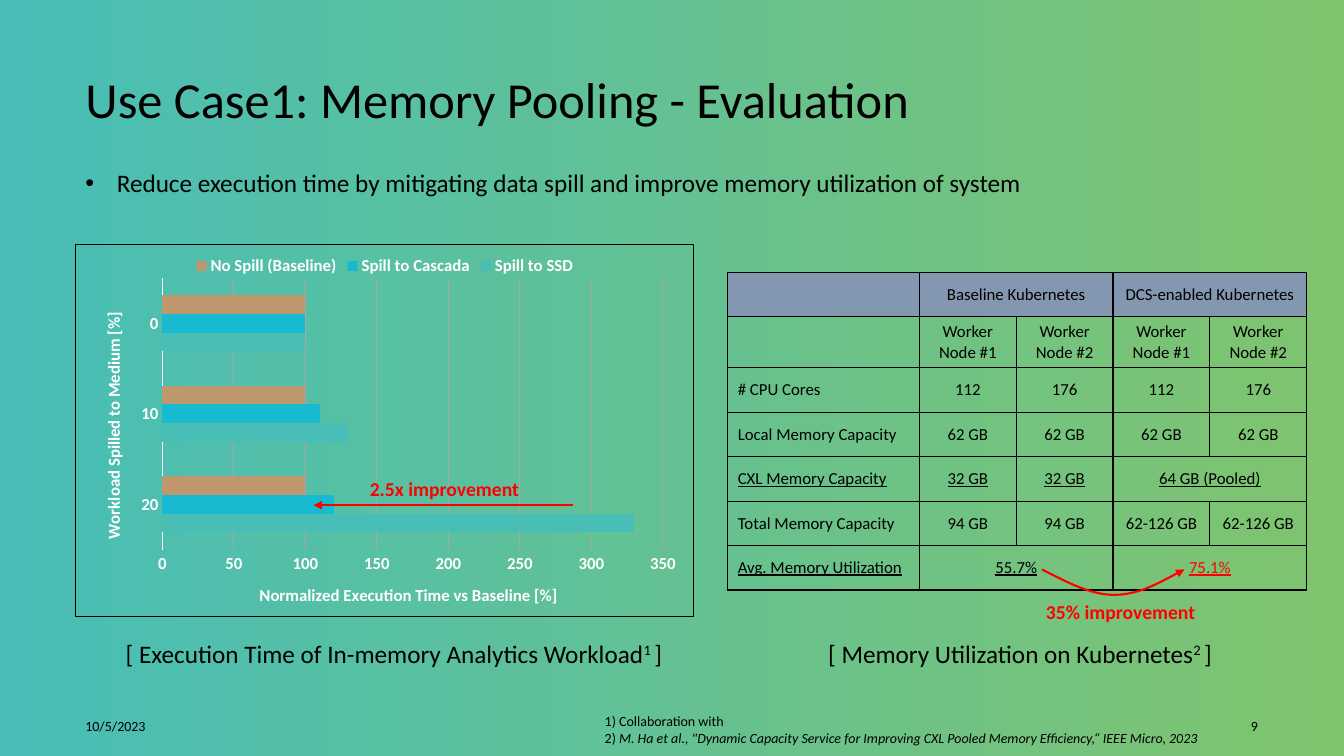
from pptx import Presentation
from pptx.chart.data import CategoryChartData
from pptx.dml.color import RGBColor
from pptx.enum.chart import XL_CHART_TYPE, XL_LEGEND_POSITION, XL_TICK_MARK
from pptx.enum.shapes import MSO_CONNECTOR
from pptx.enum.text import MSO_ANCHOR, MSO_AUTO_SIZE, PP_ALIGN
from pptx.oxml import parse_xml
from pptx.oxml.ns import nsdecls, qn
from pptx.util import Cm, Pt

LEFT, CENTER, RIGHT = PP_ALIGN.LEFT, PP_ALIGN.CENTER, PP_ALIGN.RIGHT
TOP, MIDDLE = MSO_ANCHOR.TOP, MSO_ANCHOR.MIDDLE
NO_TICKS = XL_TICK_MARK.NONE
FONT, BLACK, WHITE, RED, HEADER = "Calibri", "000000", "FFFFFF", "FF0000", "8497B0"
BACKGROUND = ("48BEB7", "80C46E")

TITLE = "Use Case1: Memory Pooling - Evaluation"
BULLET = "Reduce execution time by mitigating data spill and improve memory utilization of system"
CATEGORIES = ["20", "10", "0"]
SERIES = [
    ("Spill to SSD", (330, 130, 100), "48BEB7"),
    ("Spill to Cascada", (120, 110, 100), "17BAD0"),
    ("No Spill (Baseline)", (100, 100, 100), "BE986C"),
]
CATEGORY_TITLE = "Workload Spilled to Medium [%]"
VALUE_TITLE = "Normalized Execution Time vs Baseline [%]"
PLOT_LAYOUT = {"x": 0.14, "y": 0.09, "w": 0.81, "h": 0.73}

# None joins a cell to the one on its left
TABLE = [
    ["", "Baseline Kubernetes", None, "DCS-enabled Kubernetes", None],
    ["", "Worker\nNode #1", "Worker\nNode #2", "Worker\nNode #1", "Worker\nNode #2"],
    ["# CPU Cores", "112", "176", "112", "176"],
    ["Local Memory Capacity", "62 GB", "62 GB", "62 GB", "62 GB"],
    ["CXL Memory Capacity", "32 GB", "32 GB", "64 GB (Pooled)", None],
    ["Total Memory Capacity", "94 GB", "94 GB", "62-126 GB", "62-126 GB"],
    ["Avg. Memory Utilization", "55.7%", None, "75.1%", None],
]
UNDERLINED_ROWS = (4, 6)
RED_CELL = "75.1%"
COLUMN_WIDTHS = [4.83] + [2.44] * 4
ROW_HEIGHT = 1.12

# Each paragraph is a list of (text, style)
CAPTIONS = [
    ((2.92, 15.95, 14.58, 1.02), "[ Execution Time of In-memory Analytics Workload", "1 "),
    ((20.62, 15.95, 10.62, 1.02), "[ Memory Utilization on Kubernetes", "2 "),
]
FOOTNOTES = [
    [("1) Collaboration with", "")],
    [("2) ", ""),
     ("M. Ha\u00a0et al., \"Dynamic Capacity Service for Improving CXL Pooled Memory "
      "Efficiency,“ IEEE Micro, 2023", "italic")],
]
CALLOUTS = [
    ((9.07, 11.89, 4.29, 0.86), "2.5x improvement"),
    ((26.11, 14.99, 4.29, 0.86), "35% improvement"),
]
CURVE = [(26.26, 14.35), (26.87, 14.66), (27.48, 14.99), (28.07, 14.99),
         (28.68, 14.99), (29.26, 14.66), (29.85, 14.35)]


def color(value):
    return RGBColor.from_string(value)


def style_font(font, size, shade=BLACK, bold=False):
    font.name, font.size, font.bold = FONT, Pt(size), bold
    font.color.rgb = color(shade)


def place(shape, box):
    shape.left, shape.top, shape.width, shape.height = map(Cm, box)


def add_text(slide, box, paragraphs, size, shade=BLACK, bold=False,
             align=LEFT, anchor=TOP, wrap=True):
    frame = slide.shapes.add_textbox(*map(Cm, box)).text_frame
    frame.word_wrap, frame.vertical_anchor = wrap, anchor
    for index, spans in enumerate(paragraphs):
        para = frame.add_paragraph() if index else frame.paragraphs[0]
        para.alignment = align
        for text, style in spans:
            span = para.add_run()
            span.text = text
            style_font(span.font, size, shade, bold)
            if style == "italic":
                span.font.italic = True
            elif style == "super":
                span.font._element.set("baseline", "30000")


def fill_placeholder(shape, box, text, size, anchor):
    place(shape, box)
    frame = shape.text_frame
    frame.text = text
    frame.auto_size, frame.vertical_anchor = MSO_AUTO_SIZE.NONE, anchor
    para = frame.paragraphs[0]
    para.alignment, para.space_before = LEFT, Pt(0)
    style_font(para.runs[0].font, size)
    return para


def finish_arrow(shape, width):
    """Make the line red, without shadow, with a triangle at its end."""
    shape.line.color.rgb, shape.line.width = color(RED), Pt(width)
    shape.line._get_or_add_ln().append(parse_xml(f'<a:tailEnd {nsdecls("a")} type="triangle"/>'))
    properties = shape._element.spPr
    if properties.find(qn("a:effectLst")) is None:
        properties.append(parse_xml(f'<a:effectLst {nsdecls("a")}/>'))


def add_curve(slide):
    points = [(Cm(x), Cm(y)) for x, y in CURVE]
    builder = slide.shapes.build_freeform(*points[0])
    builder.add_line_segments(points[1:], close=False)
    curve = builder.convert_to_shape()
    curve.fill.background()
    curve.shadow.inherit = False
    segments = list(curve._element.iter(qn("a:lnTo")))
    for start in range(0, len(segments), 3):
        bezier = parse_xml(f'<a:cubicBezTo {nsdecls("a")}/>')
        segments[start].addprevious(bezier)
        for segment in segments[start:start + 3]:
            bezier.append(segment[0])
            segment.getparent().remove(segment)
    finish_arrow(curve, 1.5)


def add_time_chart(slide):
    data = CategoryChartData()
    data.categories = CATEGORIES
    for name, values, _ in SERIES:
        data.add_series(name, values)
    box = map(Cm, (1.9, 6.15, 15.6, 9.4))
    chart = slide.shapes.add_chart(XL_CHART_TYPE.BAR_CLUSTERED, *box, data).chart
    style_font(chart.font, 12, WHITE, True)
    chart.has_title, chart.has_legend = False, True
    chart.legend.position, chart.legend.include_in_layout = XL_LEGEND_POSITION.TOP, False
    style_font(chart.legend.font, 12, WHITE, True)
    plot = chart.plots[0]
    plot.gap_width, plot.overlap, plot.vary_by_categories = 182, 0, False
    for series, (_, _, shade) in zip(plot.series, SERIES):
        series.format.fill.solid()
        series.format.fill.fore_color.rgb = color(shade)
    for axis, title in ((chart.category_axis, CATEGORY_TITLE), (chart.value_axis, VALUE_TITLE)):
        axis.axis_title.text_frame.text = title
        style_font(axis.axis_title.text_frame.paragraphs[0].runs[0].font, 12, WHITE, True)
        style_font(axis.tick_labels.font, 12, WHITE, True)
        axis.major_tick_mark = axis.minor_tick_mark = NO_TICKS
    line = chart.category_axis.format.line
    line.color.rgb, line.width = color(WHITE), Pt(0.75)
    values = chart.value_axis
    values.minimum_scale, values.maximum_scale, values.major_unit = 0, 350, 50
    values.format.line.fill.background()
    grid = values.major_gridlines.format.line
    grid.color.rgb, grid.width = color("A6A6A6"), Pt(0.75)

    body = chart._chartSpace.find(qn("c:chart"))
    body.addnext(parse_xml(
        f'<c:spPr {nsdecls("c", "a")}><a:noFill/><a:ln w="9525"><a:solidFill>'
        f'<a:srgbClr val="{BLACK}"/></a:solidFill></a:ln></c:spPr>'))
    area = body.find(qn("c:plotArea"))
    for layout in area.findall(qn("c:layout")):
        area.remove(layout)
    modes = '<c:xMode val="edge"/><c:yMode val="edge"/>'
    sizes = "".join(f'<c:{key} val="{value}"/>' for key, value in PLOT_LAYOUT.items())
    area.insert(0, parse_xml(
        f'<c:layout {nsdecls("c")}><c:manualLayout><c:layoutTarget val="inner"/>'
        f'{modes}{sizes}</c:manualLayout></c:layout>'))


def format_cell(cell, text, row, column):
    for side in "LRTB":
        cell._tc.get_or_add_tcPr().append(parse_xml(
            f'<a:ln{side} {nsdecls("a")} w="12700"><a:solidFill>'
            f'<a:srgbClr val="{BLACK}"/></a:solidFill></a:ln{side}>'))
    if row == 0:
        cell.fill.solid()
        cell.fill.fore_color.rgb = color(HEADER)
    else:
        cell.fill.background()
    cell.vertical_anchor = MIDDLE
    cell.text_frame.text = text or ""
    for para in cell.text_frame.paragraphs:
        para.alignment = CENTER if column else LEFT
        style_font(para.font, 12)
        for span in para.runs:
            style_font(span.font, 12, RED if text == RED_CELL else BLACK)
            span.font.underline = row in UNDERLINED_ROWS


def add_memory_table(slide):
    box = map(Cm, (18.34, 6.86, sum(COLUMN_WIDTHS), ROW_HEIGHT * len(TABLE)))
    table = slide.shapes.add_table(len(TABLE), len(COLUMN_WIDTHS), *box).table
    table.first_row = table.horz_banding = False
    for column, width in zip(table.columns, COLUMN_WIDTHS):
        column.width = Cm(width)
    for row, texts in enumerate(TABLE):
        table.rows[row].height = Cm(ROW_HEIGHT)
        for column, text in enumerate(texts):
            format_cell(table.cell(row, column), text, row, column)
            if text is None:
                table.cell(row, column - 1).merge(table.cell(row, column))


def main():
    deck = Presentation()
    deck.slide_width, deck.slide_height = Cm(33.87), Cm(19.05)
    slide = deck.slides.add_slide(deck.slide_layouts[1])
    fill = slide.background.fill
    fill.gradient()
    fill.gradient_angle = 0
    for stop, shade in zip(fill.gradient_stops, BACKGROUND):
        stop.color.rgb = color(shade)

    fill_placeholder(slide.shapes.title, (1.9, 1.1, 30.05, 2.77), TITLE, 36, MIDDLE)
    bullet = fill_placeholder(slide.placeholders[1], (1.9, 4.09, 30.05, 2.08), BULLET, 18, TOP)
    properties = bullet._p.get_or_add_pPr()
    properties.set("marL", str(Cm(0.79)))
    properties.set("indent", str(-Cm(0.79)))

    add_time_chart(slide)
    add_memory_table(slide)
    for box, text, mark in CAPTIONS:
        add_text(slide, box, [[(text, ""), (mark, "super"), ("]", "")]], 18)
    arrow = slide.shapes.add_connector(
        MSO_CONNECTOR.STRAIGHT, Cm(14.43), Cm(12.73), Cm(7.9), Cm(12.73))
    finish_arrow(arrow, 1.25)
    add_curve(slide)
    for box, text in CALLOUTS:
        add_text(slide, box, [[(text, "")]], 14, RED, True, wrap=False)
    add_text(slide, (1.9, 17.86, 4.45, 0.89), [[("10/5/2023", "")]], 10, anchor=MIDDLE)
    add_text(slide, (30.43, 17.86, 1.52, 0.89), [[("9", "")]], 10, align=RIGHT, anchor=MIDDLE)
    add_text(slide, (14.99, 17.83, 15.95, 1.12), FOOTNOTES, 10)
    deck.save("out.pptx")


if __name__ == "__main__":
    main()
